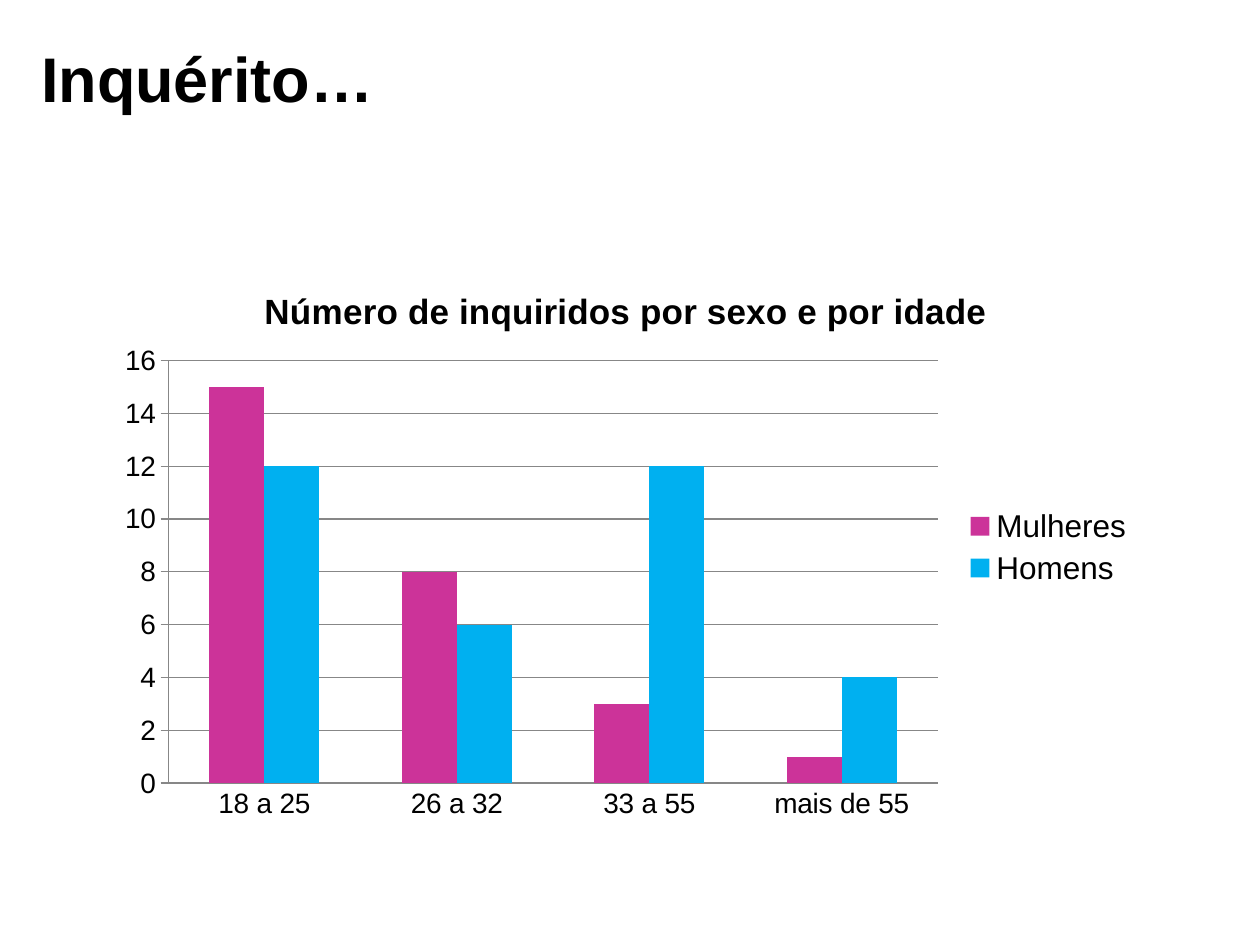
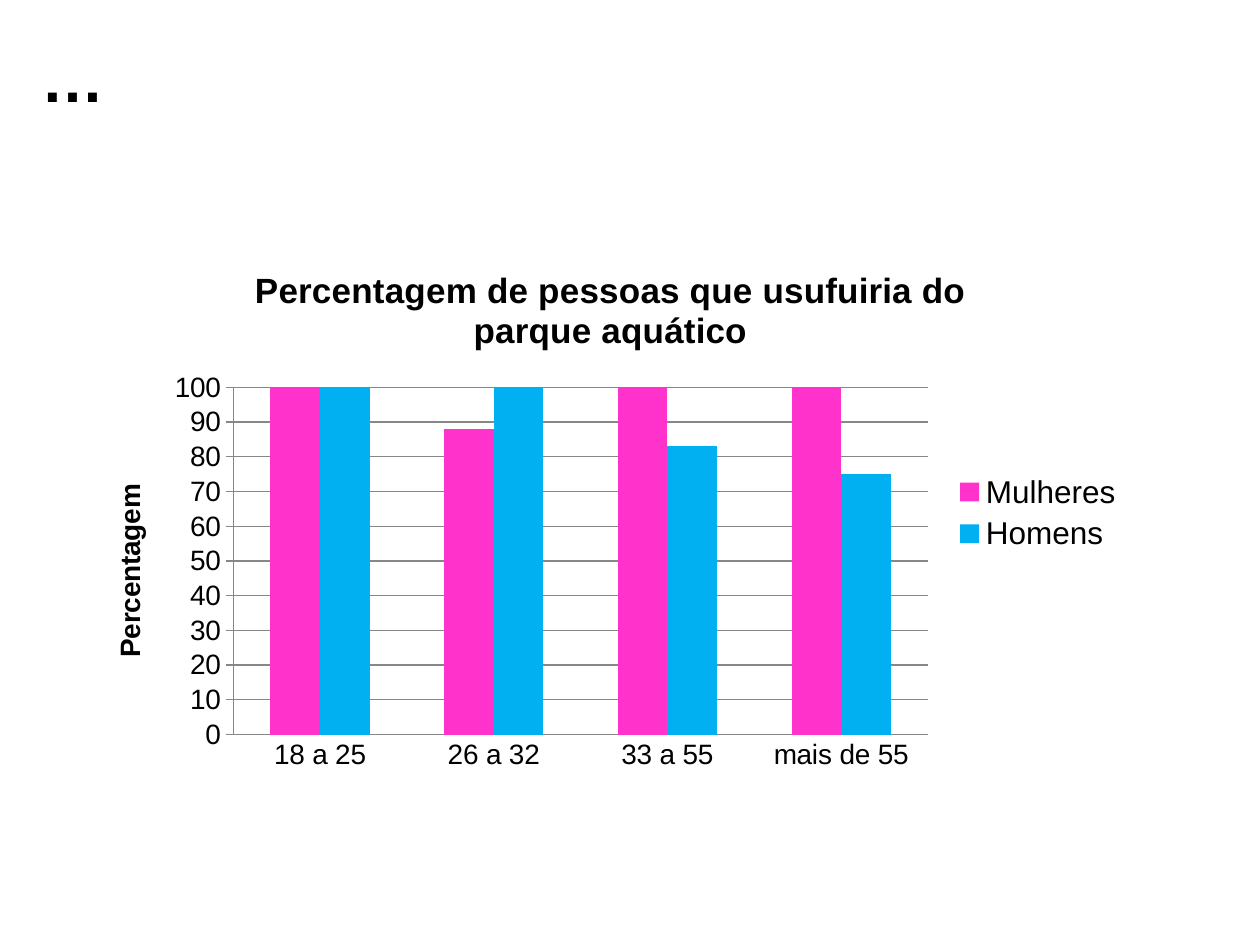
from dataclasses import dataclass

from lxml import etree
from pptx import Presentation
from pptx.chart.data import CategoryChartData
from pptx.dml.color import RGBColor
from pptx.enum.chart import XL_CHART_TYPE, XL_LEGEND_POSITION, XL_TICK_MARK
from pptx.enum.text import MSO_ANCHOR
from pptx.oxml.ns import qn
from pptx.util import Cm, Pt

COLUMNS = XL_CHART_TYPE.COLUMN_CLUSTERED
LEGEND_RIGHT = XL_LEGEND_POSITION.RIGHT
TICK_NONE = XL_TICK_MARK.NONE
TICK_OUTSIDE = XL_TICK_MARK.OUTSIDE
MIDDLE = MSO_ANCHOR.MIDDLE


@dataclass(frozen=True)
class Theme:
    font: str = "Arial"
    text: RGBColor = RGBColor(0x00, 0x00, 0x00)
    lines: RGBColor = RGBColor(0x87, 0x87, 0x87)
    men: RGBColor = RGBColor(0x00, 0xB0, 0xF0)
    dark_pink: RGBColor = RGBColor(0xCC, 0x33, 0x99)
    bright_pink: RGBColor = RGBColor(0xFF, 0x33, 0xCC)
    heading_size: int = 36
    title_size: int = 20
    legend_size: int = 18
    axis_size: int = 16
    line_width: float = 0.75


THEME = Theme()
HEADING_BOX = (0.58, 0.38, 20.4, 2.36)
AGE_GROUPS = ("18 a 25", "26 a 32", "33 a 55", "mais de 55")

SURVEY_SLIDES = (
    {
        "heading": "Inquérito…",
        "box": (2.11, 5.33, 21.01, 11.4),
        "title": "Número de inquiridos por sexo e por idade",
        "axis_title": None,
        "scale": {"minimum_scale": 0, "maximum_scale": 16, "major_unit": 2},
        "plot": (1.28, 1.94, 15.52, 8.52),
        "series": (
            ("Mulheres", (15, 8, 3, 1), THEME.dark_pink),
            ("Homens", (12, 6, 12, 4), THEME.men),
        ),
    },
    {
        "heading": "…",
        "box": (1.7, 4.93, 21.21, 10.82),
        "title": "Percentagem de pessoas que usufuiria do parque aquático",
        "axis_title": "Percentagem",
        "scale": {"minimum_scale": 0, "maximum_scale": 100, "major_unit": 10},
        "plot": (3, 2.88, 14.01, 7),
        "series": (
            ("Mulheres", (100, 88, 100, 100), THEME.bright_pink),
            ("Homens", (100, 100, 83, 75), THEME.men),
        ),
    },
)


def apply(target, values):
    for name, value in values.items():
        setattr(target, name, value)


def style_font(font, size, bold=False):
    apply(font, {"name": THEME.font, "size": Pt(size), "bold": bold})
    font.color.rgb = THEME.text


def style_line(line):
    line.color.rgb = THEME.lines
    line.width = Pt(THEME.line_width)


def write_span(frame, text, size):
    span = frame.paragraphs[0].add_run()
    span.text = text
    style_font(span.font, size, bold=True)


def add_heading(page, box, text):
    frame = page.shapes.add_textbox(*map(Cm, box)).text_frame
    apply(frame, {"word_wrap": True, "vertical_anchor": MIDDLE})
    write_span(frame, text, THEME.heading_size)


def place_plot(chart, plot_box, chart_box):
    area = chart.element.find(".//" + qn("c:plotArea"))
    for layout in area.findall(qn("c:layout")):
        area.remove(layout)
    layout = etree.Element(qn("c:layout"))
    area.insert(0, layout)
    manual = etree.SubElement(layout, qn("c:manualLayout"))
    settings = {"layoutTarget": "inner", "xMode": "edge", "yMode": "edge"}
    for name, length, whole in zip("xywh", plot_box, chart_box[2:] * 2):
        settings[name] = length / whole
    for name, value in settings.items():
        etree.SubElement(manual, qn(f"c:{name}")).set("val", str(value))


def style_axes(chart, scale, axis_title):
    ages, amounts = chart.category_axis, chart.value_axis
    apply(ages, {"major_tick_mark": TICK_NONE, "minor_tick_mark": TICK_NONE})
    apply(amounts, {
        "major_tick_mark": TICK_OUTSIDE,
        "minor_tick_mark": TICK_NONE,
        "has_major_gridlines": True,
        **scale,
    })
    style_line(amounts.major_gridlines.format.line)
    for axis in (ages, amounts):
        style_font(axis.tick_labels.font, THEME.axis_size)
        style_line(axis.format.line)
    if axis_title:
        write_span(amounts.axis_title.text_frame, axis_title, THEME.axis_size)


def add_survey_chart(page, survey):
    data = CategoryChartData()
    data.categories = AGE_GROUPS
    for name, values, _ in survey["series"]:
        data.add_series(name, values)
    chart = page.shapes.add_chart(COLUMNS, *map(Cm, survey["box"]), data).chart
    style_font(chart.font, THEME.axis_size)
    write_span(chart.chart_title.text_frame, survey["title"], THEME.title_size)
    chart.has_legend = True
    apply(chart.legend, {"position": LEGEND_RIGHT, "include_in_layout": False})
    style_font(chart.legend.font, THEME.legend_size)
    plot = chart.plots[0]
    apply(plot, {"gap_width": 150, "overlap": 0, "vary_by_categories": False})
    for series, (_, _, color) in zip(plot.series, survey["series"]):
        series.format.fill.solid()
        series.format.fill.fore_color.rgb = color
    style_axes(chart, survey["scale"], survey["axis_title"])
    place_plot(chart, survey["plot"], survey["box"])


def build_survey_slide(deck, survey):
    page = deck.slides.add_slide(deck.slide_layouts[6])
    add_heading(page, HEADING_BOX, survey["heading"])
    add_survey_chart(page, survey)


def main():
    deck = Presentation()
    apply(deck, {"slide_width": Cm(25.4), "slide_height": Cm(19.05)})
    for survey in SURVEY_SLIDES:
        build_survey_slide(deck, survey)
    deck.save("out.pptx")


if __name__ == "__main__":
    main()
